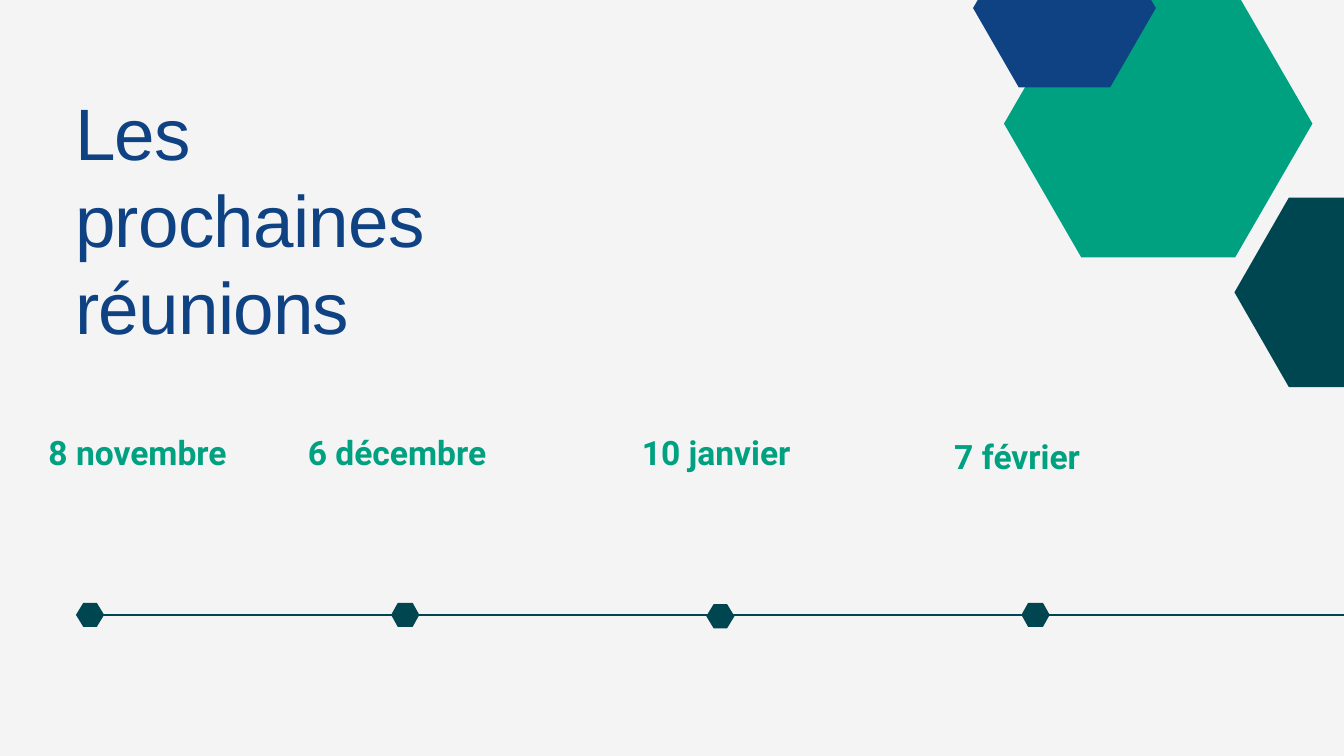
from dataclasses import dataclass

from lxml import etree
from pptx import Presentation
from pptx import util as u
from pptx.dml.color import RGBColor
from pptx.enum import shapes
from pptx.oxml.ns import qn

PX = 9144


@dataclass(frozen=True)
class Theme:
    paper: str = "F4F4F4"
    petrol: str = "004651"
    green: str = "00A181"
    blue: str = "0F4283"
    title_font: str = "Arial"
    date_font: str = "Roboto"
    title_size: int = 78
    date_size: int = 36
    leading: float = 1.2
    rule_width: float = 1.5


THEME = Theme()

MEETINGS = [
    ("8 novembre", 0, 0, 0),
    ("6 décembre", 386, 0, 0),
    ("10 janvier", 883, 0, 2),
    ("7 février", 1348, 6, 0),
]


def rgb(color):
    return RGBColor.from_string(color)


def add_hexagon(slide, left, top, width, height, color):
    inset = width / 4
    right, bottom, middle = left + width, top + height, top + height / 2
    outline = slide.shapes.build_freeform(right, middle, scale=PX)
    outline.add_line_segments([
        (right - inset, bottom), (left + inset, bottom), (left, middle),
        (left + inset, top), (right - inset, top),
    ], close=True)
    hexagon = outline.convert_to_shape()
    hexagon.shadow.inherit = False
    hexagon.fill.solid()
    hexagon.fill.fore_color.rgb = rgb(color)
    hexagon.line.fill.background()


def add_text(slide, box, wording, font, size, color, bold=False):
    frame = slide.shapes.add_textbox(*(v * PX for v in box)).text_frame
    frame.margin_left = frame.margin_top = 0
    frame.margin_right = frame.margin_bottom = 0
    frame.word_wrap = True
    paragraph = frame.paragraphs[0]
    paragraph.text = wording
    paragraph.line_spacing = u.Pt(size * THEME.leading)
    paragraph.font.name = font
    paragraph.font.size = u.Pt(size)
    paragraph.font.bold = bold
    paragraph.font.color.rgb = rgb(color)
    return paragraph


def add_title(slide, box):
    title = add_text(slide, box, "Les prochaines réunions",
                     THEME.title_font, THEME.title_size, THEME.blue)
    title.runs[0].font._element.set("spc", "-80")


def add_timeline(slide, left, top, width):
    axis = top + 273
    rule = slide.shapes.add_connector(
        shapes.MSO_CONNECTOR.STRAIGHT,
        (left + 67) * PX, axis * PX, (left + width) * PX, axis * PX)
    rule.line.color.rgb = rgb(THEME.petrol)
    rule.line.width = u.Pt(THEME.rule_width)
    etree.SubElement(rule._element.spPr, qn("a:effectLst"))
    for i, (date, date_x, date_y, marker_y) in enumerate(MEETINGS):
        add_hexagon(slide, left + 41 + 469 * i, axis - 18 + marker_y,
                    42, 36, THEME.petrol)
        add_text(slide, (left + date_x, top + date_y, 368, 60), date,
                 THEME.date_font, THEME.date_size, THEME.green, bold=True)


def add_corner_hexagons(slide, left, top):
    add_hexagon(slide, left + 389, top + 399, 326, 282, THEME.petrol)
    add_hexagon(slide, left + 46, top + 90, 459, 398, THEME.green)
    add_hexagon(slide, left, top, 272, 235, THEME.blue)


def main():
    deck = Presentation()
    deck.slide_width, deck.slide_height = 2000 * PX, 1125 * PX
    slide = deck.slides.add_slide(deck.slide_layouts[6])
    slide.background.fill.solid()
    slide.background.fill.fore_color.rgb = rgb(THEME.paper)
    add_title(slide, (112, 130, 623, 388))
    add_timeline(slide, 72, 642, 1928)
    add_corner_hexagons(slide, 1448, -105)
    deck.save("out.pptx")


if __name__ == "__main__":
    main()
